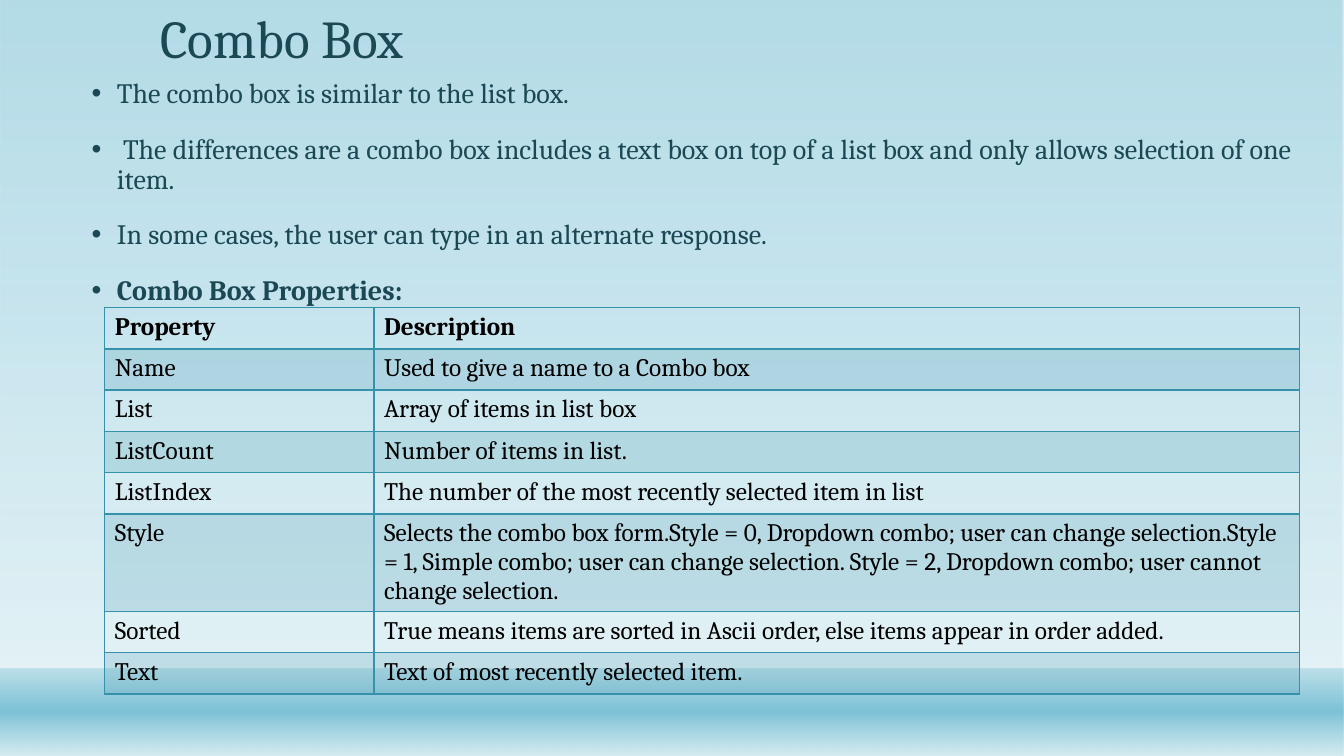
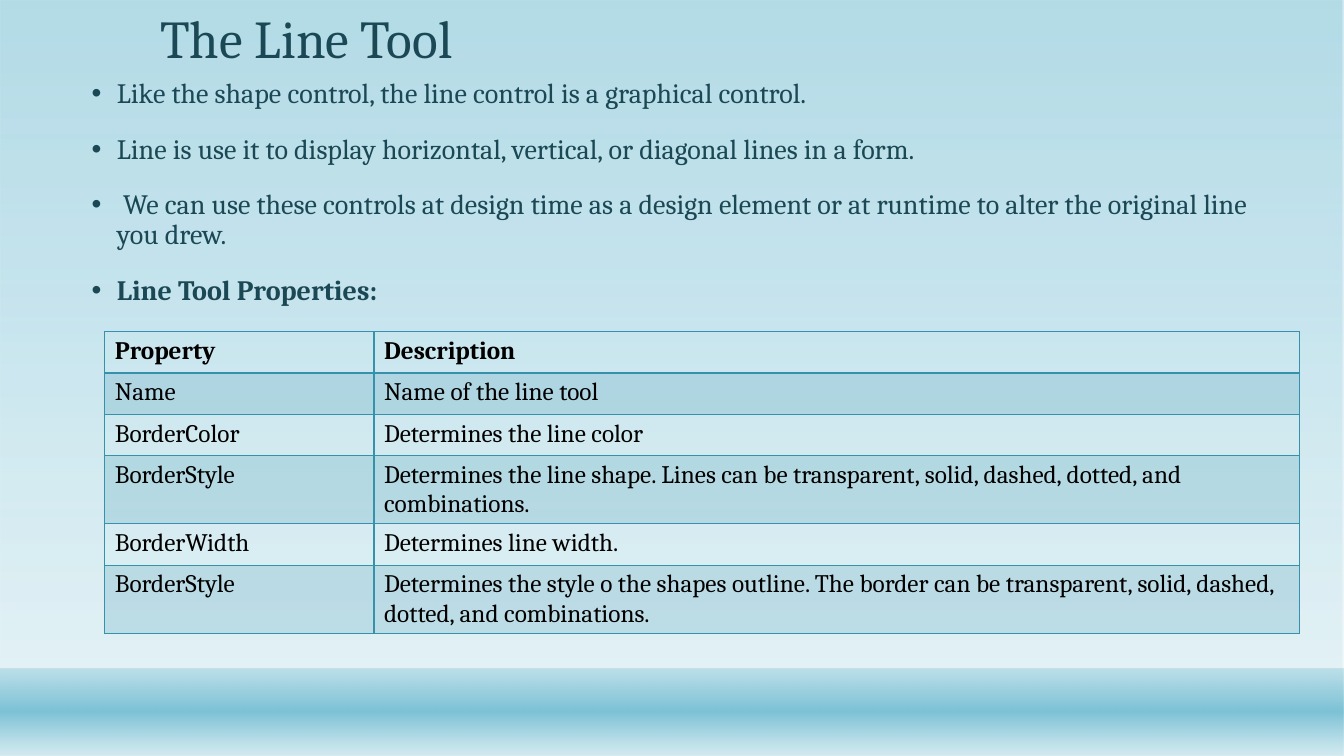
import pptx
import pptx.dml.color
import pptx.enum.shapes
import pptx.enum.text
import pptx.oxml
import pptx.oxml.ns
import pptx.util
from pptx.util import Inches

COLORS = {"ink": "1B4855", "cell_text": "000000", "rule": "3691AA",
          "water": "7DC2D6", "mist": "D4EBF1"}
FONT = "Cambria"
SLIDE_WIDTH, SLIDE_HEIGHT = 13.33, 7.5
BAND_HEIGHT = 0.87
TITLE_BOX = (1.49, 0.07, 10.95, 0.67)
BODY_BOX = (0.76, 0.74, 12.17, 6.4)
TABLE_LEFT = 1.04
COLUMN_WIDTHS = (2.67, 9.18)
ROW_HEIGHT = 0.41
NAMESPACE = pptx.oxml.ns.nsdecls("a")

# Gradient stops: position, colour, opacity (all in percent)
SKY_STOPS = [(0, "water", 58), (88, "mist", 65)]
BAND_STOPS = [(1, "water", 38), (49, "water", 100), (100, "mist", 89)]

TOPICS = [
    {
        "title": "Combo Box",
        "points": [
            "The combo box is similar to the list box.",
            " The differences are a combo box includes a text box on top of a list box "
            "and only allows selection of one item.",
            "In some cases, the user can type in an alternate response.",
            "Combo Box Properties:",
        ],
        "table_top": 3.05,
        "properties": [
            ("Name", "Used to give a name to a Combo box"),
            ("List", "Array of items in list box"),
            ("ListCount", "Number of items in list."),
            ("ListIndex", "The number of the most recently selected item in list"),
            ("Style", "Selects the combo box form.Style = 0, Dropdown combo; user can "
             "change selection.Style = 1, Simple combo; user can change selection. "
             "Style = 2, Dropdown combo; user cannot change selection."),
            ("Sorted", "True means items are sorted in Ascii order, else items appear "
             "in order added."),
            ("Text", "Text of most recently selected item."),
        ],
    },
    {
        "title": "The Line Tool",
        "points": [
            "Like the shape control, the line control is a graphical control.",
            "Line is use it to display horizontal, vertical, or diagonal lines in a form.",
            " We can use these controls at design time as a design element or at runtime "
            "to alter the original line you drew.",
            "Line Tool Properties:",
        ],
        "table_top": 3.29,
        "properties": [
            ("Name", "Name of the line tool"),
            ("BorderColor", "Determines the line color"),
            ("BorderStyle", "Determines the line shape. Lines can be transparent, solid, "
             "dashed, dotted, and combinations."),
            ("BorderWidth", "Determines line width."),
            ("BorderStyle", "Determines the style o the shapes outline. The border can be "
             "transparent, solid, dashed, dotted, and combinations."),
        ],
    },
]


def style_runs(paragraph, size, color, bold=False):
    for run in paragraph.runs:
        run.font.name = FONT
        run.font.size = pptx.util.Pt(size)
        run.font.bold = bold
        run.font.color.rgb = pptx.dml.color.RGBColor.from_string(COLORS[color])


def place(shape, box):
    shape.left, shape.top, shape.width, shape.height = map(Inches, box)


def gradient_panel(slide, box, stops):
    """A borderless rectangle that fades from top to bottom."""
    panel = slide.shapes.add_shape(pptx.enum.shapes.MSO_SHAPE.RECTANGLE,
                                   *map(Inches, box))
    panel.shadow.inherit = False
    panel.line.fill.background()
    stop_xml = "".join(
        f'<a:gs pos="{position * 1000}"><a:srgbClr val="{COLORS[color]}">'
        f'<a:alpha val="{opacity * 1000}"/></a:srgbClr></a:gs>'
        for position, color, opacity in stops)
    gradient = pptx.oxml.parse_xml(
        f'<a:gradFill {NAMESPACE} rotWithShape="1"><a:gsLst>{stop_xml}</a:gsLst>'
        '<a:lin ang="5400000" scaled="0"/></a:gradFill>')
    panel._element.spPr.find(pptx.oxml.ns.qn("a:prstGeom")).addnext(gradient)
    return panel


def add_backdrop(prs, slide):
    """Draw the sky and the water band, then move them to the slide master."""
    sky = gradient_panel(slide, (0, 0, SLIDE_WIDTH, SLIDE_HEIGHT), SKY_STOPS)
    band = gradient_panel(
        slide, (0, SLIDE_HEIGHT - BAND_HEIGHT, SLIDE_WIDTH, BAND_HEIGHT), BAND_STOPS)
    master_tree = prs.slide_master.shapes._spTree
    for order, panel in enumerate((sky, band)):
        panel._element.nvSpPr.cNvPr.set("id", str(100 + order))
        master_tree.insert(2 + order, panel._element)


def add_title(slide, box, text):
    title = slide.shapes.title
    place(title, box)
    frame = title.text_frame
    frame.text = text
    frame.auto_size = pptx.enum.text.MSO_AUTO_SIZE.NONE
    frame.vertical_anchor = pptx.enum.text.MSO_ANCHOR.BOTTOM
    heading = frame.paragraphs[0]
    heading.alignment = pptx.enum.text.PP_ALIGN.LEFT
    heading.line_spacing = 0.9
    style_runs(heading, 38, "ink")


def add_points(slide, box, points):
    """Bulleted list whose last point, in bold, introduces the table."""
    body = slide.placeholders[1]
    place(body, box)
    frame = body.text_frame
    frame.text = "\n".join(points)
    frame.auto_size = pptx.enum.text.MSO_AUTO_SIZE.NONE
    last = len(points) - 1
    for index, point in enumerate(frame.paragraphs):
        properties = point._p.get_or_add_pPr()
        properties.set("marL", str(Inches(0.3)))
        properties.set("indent", str(Inches(-0.25)))
        properties.append(pptx.oxml.parse_xml(
            f'<a:buFont {NAMESPACE} typeface="Arial"/>'))
        properties.append(pptx.oxml.parse_xml(f'<a:buChar {NAMESPACE} char="•"/>'))
        point.line_spacing = 0.9
        point.space_before = pptx.util.Pt(18 if index else 0)
        style_runs(point, 20, "ink", bold=index == last)


def format_cell(cell, row):
    # Borders: a double-weight rule separates the header from the rows
    properties = cell._tc.get_or_add_tcPr()
    weights = {"lnL": 1, "lnR": 1, "lnT": 2 if row == 1 else 1,
               "lnB": 2 if row == 0 else 1}
    for side, weight in weights.items():
        properties.append(pptx.oxml.parse_xml(
            f'<a:{side} {NAMESPACE} w="{pptx.util.Pt(weight)}"><a:solidFill>'
            f'<a:srgbClr val="{COLORS["rule"]}"/></a:solidFill></a:{side}>'))
    # Every other row is tinted
    if row % 2:
        properties.append(pptx.oxml.parse_xml(
            f'<a:solidFill {NAMESPACE}><a:srgbClr val="{COLORS["rule"]}">'
            '<a:alpha val="20000"/></a:srgbClr></a:solidFill>'))
    else:
        cell.fill.background()
    style_runs(cell.text_frame.paragraphs[0], 18, "cell_text", bold=row == 0)


def add_property_table(slide, left, top, properties):
    rows = [("Property", "Description"), *properties]
    table = slide.shapes.add_table(
        len(rows), len(COLUMN_WIDTHS), Inches(left), Inches(top),
        Inches(sum(COLUMN_WIDTHS)), Inches(ROW_HEIGHT * len(rows))).table
    for column, width in zip(table.columns, COLUMN_WIDTHS):
        column.width = Inches(width)
    for row, texts in enumerate(rows):
        table.rows[row].height = Inches(ROW_HEIGHT)
        for column, text in enumerate(texts):
            cell = table.cell(row, column)
            cell.text_frame.text = text
            format_cell(cell, row)


def add_topic_slide(prs, topic):
    slide = prs.slides.add_slide(prs.slide_layouts[1])
    add_title(slide, TITLE_BOX, topic["title"])
    add_points(slide, BODY_BOX, topic["points"])
    add_property_table(slide, TABLE_LEFT, topic["table_top"], topic["properties"])
    return slide


def main():
    prs = pptx.Presentation()
    prs.slide_width = Inches(SLIDE_WIDTH)
    prs.slide_height = Inches(SLIDE_HEIGHT)
    slides = [add_topic_slide(prs, topic) for topic in TOPICS]
    add_backdrop(prs, slides[0])
    prs.save("out.pptx")


if __name__ == "__main__":
    main()
